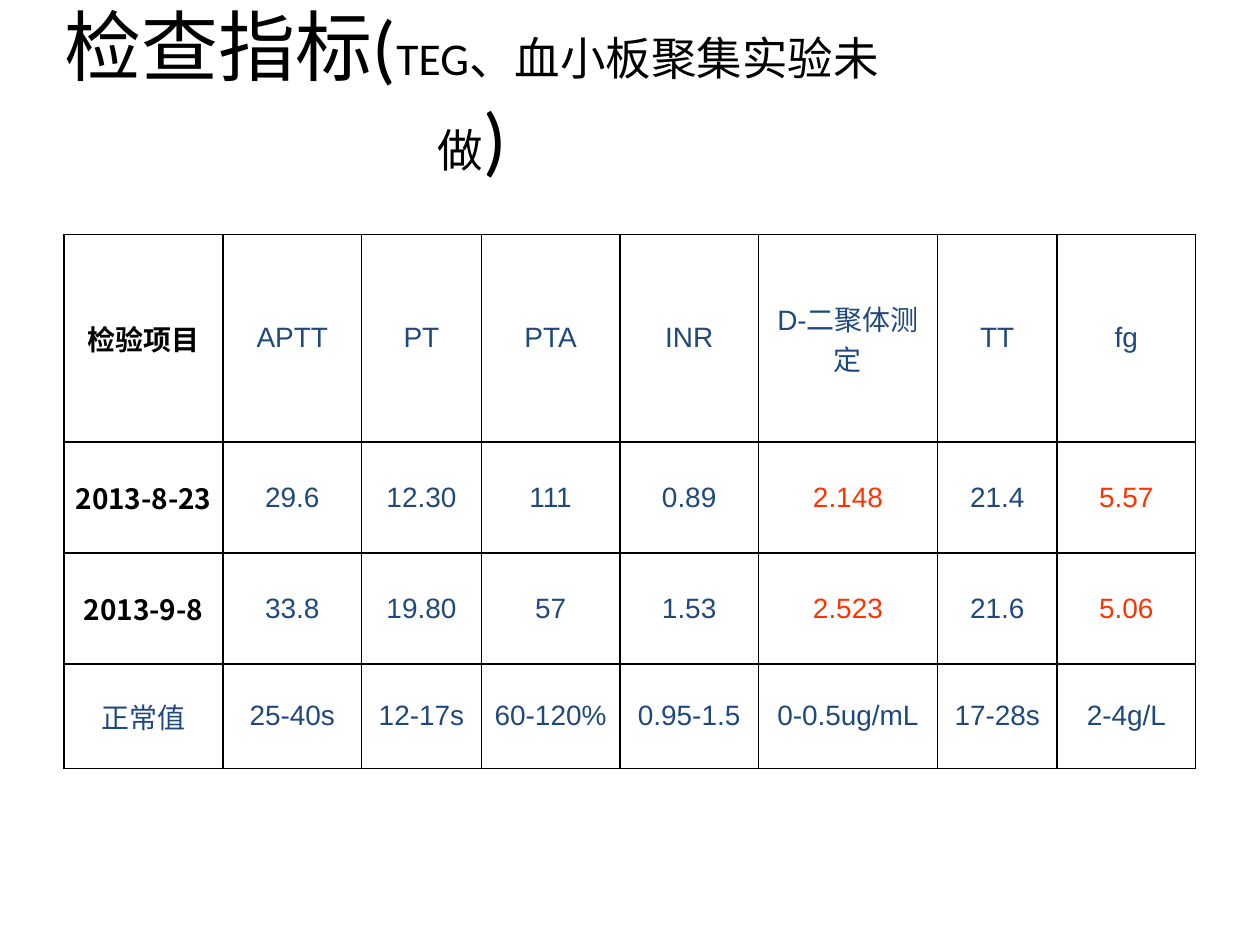
import pptx
import pptx.util
import pptx.dml.color
import pptx.enum.text
import pptx.oxml
import pptx.oxml.ns
from lxml import etree
from pptx.util import Inches

BLACK, NAVY, RED = "000000", "1F497D", "FF3300"
CJK = "Noto Sans CJK SC"


def color(value):
    return pptx.dml.color.RGBColor.from_string(value)


class SlideBuilder:
    def __init__(self, s):
        self.s = s

    def format_run(self, r, size, font, ink, bold=False):
        r.font.size = pptx.util.Pt(size)
        r.font.name = font
        r.font.bold = bold
        r.font.color.rgb = color(ink)
        ea = etree.SubElement(r.font._element, pptx.oxml.ns.qn("a:ea"))
        ea.set("typeface", CJK)

    def title(self, left, top, width, height, parts):
        sp = self.s.shapes.add_textbox(Inches(left), Inches(top), Inches(width), Inches(height))
        tf = sp.text_frame
        tf.word_wrap = True
        tf.vertical_anchor = pptx.enum.text.MSO_ANCHOR.MIDDLE
        p = tf.paragraphs[0]
        p.alignment = pptx.enum.text.PP_ALIGN.CENTER
        for text, size in parts:
            r = p.add_run()
            r.text = text
            self.format_run(r, size, "Calibri", BLACK)

    def borders(self, cell):
        tcPr = cell._tc.get_or_add_tcPr()
        for i, side in enumerate(("lnL", "lnR", "lnT", "lnB")):
            tcPr.insert(i, pptx.oxml.parse_xml(
                f'<a:{side} {pptx.oxml.ns.nsdecls("a")} w="12700"><a:solidFill>'
                f'<a:srgbClr val="{BLACK}"/></a:solidFill></a:{side}>'))

    def cell(self, cell, text, font, ink, bold):
        cell.fill.background()
        self.borders(cell)
        cell.margin_left = cell.margin_right = Inches(0.04)
        cell.margin_top = cell.margin_bottom = Inches(0.04)
        cell.vertical_anchor = pptx.enum.text.MSO_ANCHOR.MIDDLE
        p = cell.text_frame.paragraphs[0]
        p.text = text
        p.alignment = pptx.enum.text.PP_ALIGN.CENTER
        self.format_run(p.runs[0], 16, font, ink, bold)

    def table(self, left, top, widths, heights, rows, label_rows, red_cells):
        table = self.s.shapes.add_table(
            len(rows), len(widths), Inches(left), Inches(top),
            Inches(sum(widths)), Inches(sum(heights))).table
        table.first_row = table.horz_banding = False
        for column, width in zip(table.columns, widths):
            column.width = Inches(width)
        for row, height in zip(table.rows, heights):
            row.height = Inches(height)
        for i, values in enumerate(rows):
            for j, text in enumerate(values):
                label = j == 0 and i in label_rows
                ink = BLACK if label else RED if (i, j) in red_cells else NAVY
                self.cell(table.cell(i, j), text, CJK if label else "Arial", ink, label)


def main():
    prs = pptx.Presentation()
    prs.slide_width, prs.slide_height = Inches(10), Inches(7.5)
    slide = SlideBuilder(prs.slides.add_slide(prs.slide_layouts[6]))

    # Title
    slide.title(0.2, 0.21, 7.09, 1.02,
                [("检查指标(", 44), ("TEG、血小板聚集实验未做", 26), (")", 44)])

    # Coagulation results, abnormal values in red
    rows = [
        ["检验项目", "APTT", "PT", "PTA", "INR", "D-二聚体测定", "TT", "fg"],
        ["2013-8-23", "29.6", "12.30", "111", "0.89", "2.148", "21.4", "5.57"],
        ["2013-9-8", "33.8", "19.80", "57", "1.53", "2.523", "21.6", "5.06"],
        ["正常值", "25-40s", "12-17s", "60-120%", "0.95-1.5", "0-0.5ug/mL", "17-28s", "2-4g/L"],
    ]
    slide.table(0.51, 1.86, [1.26, 1.1, 0.95, 1.1, 1.1, 1.42, 0.95, 1.1],
                [1.65, 0.88, 0.88, 0.83], rows, label_rows=(0, 1, 2),
                red_cells={(i, j) for i in (1, 2) for j in (5, 7)})

    prs.save("out.pptx")


if __name__ == "__main__":
    main()
